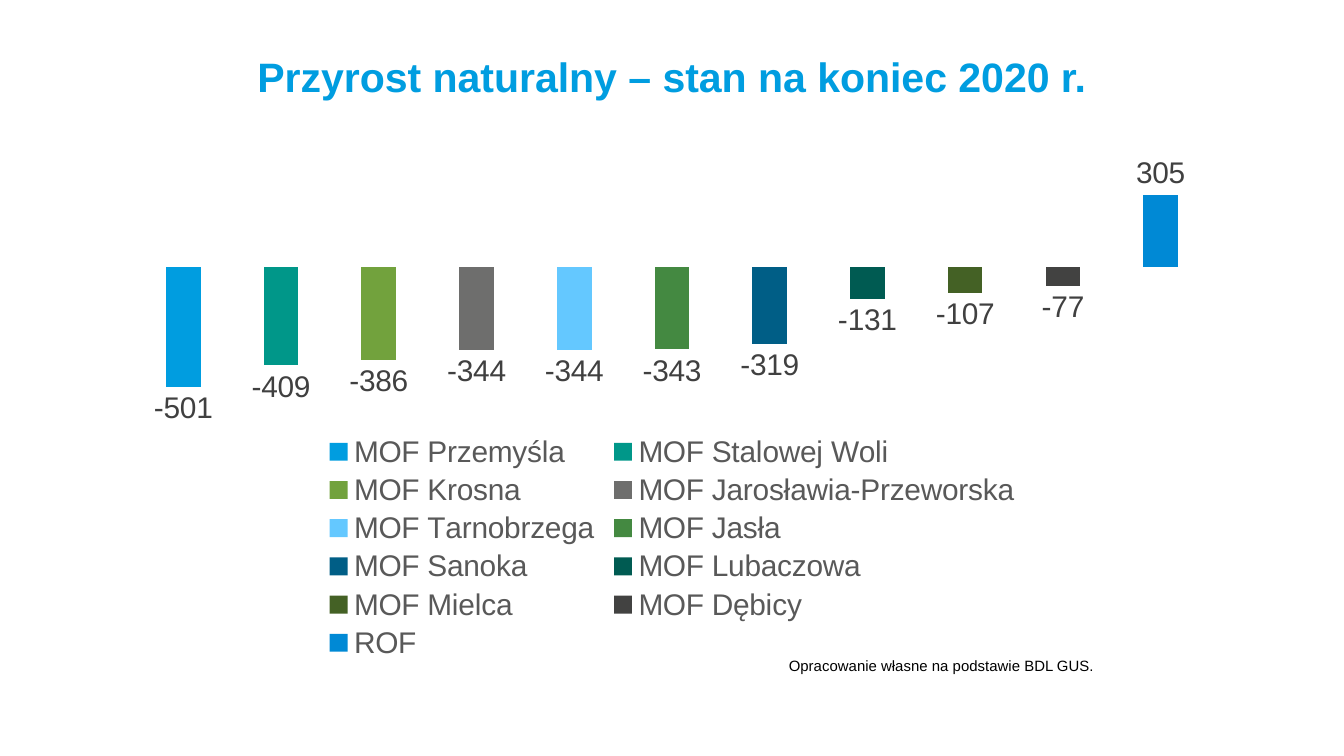
from dataclasses import dataclass

from lxml.etree import SubElement
from pptx import Presentation
from pptx.chart.data import CategoryChartData
from pptx.dml.color import RGBColor
from pptx.enum.chart import XL_CHART_TYPE as ChartType
from pptx.enum.chart import XL_LABEL_POSITION as LabelPos
from pptx.enum.chart import XL_LEGEND_POSITION as LegendPos
from pptx.enum.text import MSO_ANCHOR, MSO_AUTO_SIZE, PP_ALIGN
from pptx.oxml.ns import qn
from pptx.util import Pt

PX = 9525


@dataclass(frozen=True)
class Theme:
    font: str = "Arial"
    title: str = "009DE0"
    label: str = "404040"
    legend: str = "595959"
    source: str = "000000"
    title_size: int = 22
    chart_size: int = 16
    source_size: int = 8


theme = Theme()

AREAS = [
    ("MOF Przemyśla", -501, "009DE0"),
    ("MOF Stalowej Woli", -409, "009789"),
    ("MOF Krosna", -386, "72A23D"),
    ("MOF Jarosławia-Przeworska", -344, "6E6E6D"),
    ("MOF Tarnobrzega", -344, "64C8FF"),
    ("MOF Jasła", -343, "448941"),
    ("MOF Sanoka", -319, "005E86"),
    ("MOF Lubaczowa", -131, "005B52"),
    ("MOF Mielca", -107, "446125"),
    ("MOF Dębicy", -77, "424241"),
    ("ROF", 305, "0089D5"),
]


def box(*lengths):
    return [length * PX for length in lengths]


def style(font, size, color, bold=False):
    font.name = theme.font
    font.size = Pt(size)
    font.bold = bold
    font.color.rgb = RGBColor.from_string(color)


deck = Presentation()
deck.slide_width, deck.slide_height = box(960, 540)
slide = deck.slides.add_slide(deck.slide_layouts[5])

# Title
title = slide.shapes.title
title.left, title.top, title.width, title.height = box(80, 37, 800, 85)
frame = title.text_frame
frame.text = "Przyrost naturalny – stan na koniec 2020 r."
frame.margin_left = frame.margin_top = frame.margin_right = frame.margin_bottom = 0
frame.vertical_anchor = MSO_ANCHOR.TOP
frame.auto_size = MSO_AUTO_SIZE.NONE
frame.paragraphs[0].alignment = PP_ALIGN.CENTER
style(frame.paragraphs[0].runs[0].font, theme.title_size, theme.title, bold=True)

# Chart with one colour per area
growth = CategoryChartData()
growth.categories = [name for name, _, _ in AREAS]
growth.add_series("Series 1", [value for _, value, _ in AREAS])
chart = slide.shapes.add_chart(
    ChartType.COLUMN_CLUSTERED, *box(80, 112, 800, 363), growth).chart
chart.has_title = False
style(chart.font, theme.chart_size, theme.source)

chart.category_axis.visible = False
values = chart.value_axis
values.visible = False
values.has_major_gridlines = False
values.minimum_scale, values.maximum_scale = -600, 400

chart.has_legend = True
chart.legend.position = LegendPos.BOTTOM
chart.legend.include_in_layout = False
style(chart.legend.font, theme.chart_size, theme.legend)

columns = chart.plots[0]
columns.gap_width = 182
columns.vary_by_categories = True
columns.has_data_labels = True
labels = columns.data_labels
labels.show_value = True
labels.position = LabelPos.OUTSIDE_END
style(labels.font, theme.chart_size, theme.label)

series = columns.series[0]
series.invert_if_negative = False
for index, (_, _, color) in enumerate(AREAS):
    fill = series.points[index].format.fill
    fill.solid()
    fill.fore_color.rgb = RGBColor.from_string(color)

# Plot area placed above the legend
plot_area = chart._chartSpace.chart.plotArea
for old_layout in plot_area.findall(qn("c:layout")):
    plot_area.remove(old_layout)
layout = SubElement(plot_area, qn("c:layout"))
plot_area.insert(0, layout)
manual = SubElement(layout, qn("c:manualLayout"))
for tag, value in [("layoutTarget", "inner"), ("xMode", "edge"), ("yMode", "edge"),
                   ("x", "0.02"), ("y", "0.03"), ("w", "0.96"), ("h", "0.47")]:
    SubElement(manual, qn(f"c:{tag}")).set("val", value)

# Source note
note = slide.shapes.add_textbox(*box(554, 464, 340, 23)).text_frame
note.word_wrap = True
note.auto_size = MSO_AUTO_SIZE.SHAPE_TO_FIT_TEXT
note.text = "Opracowanie własne na podstawie BDL GUS."
style(note.paragraphs[0].runs[0].font, theme.source_size, theme.source)

deck.save("out.pptx")
